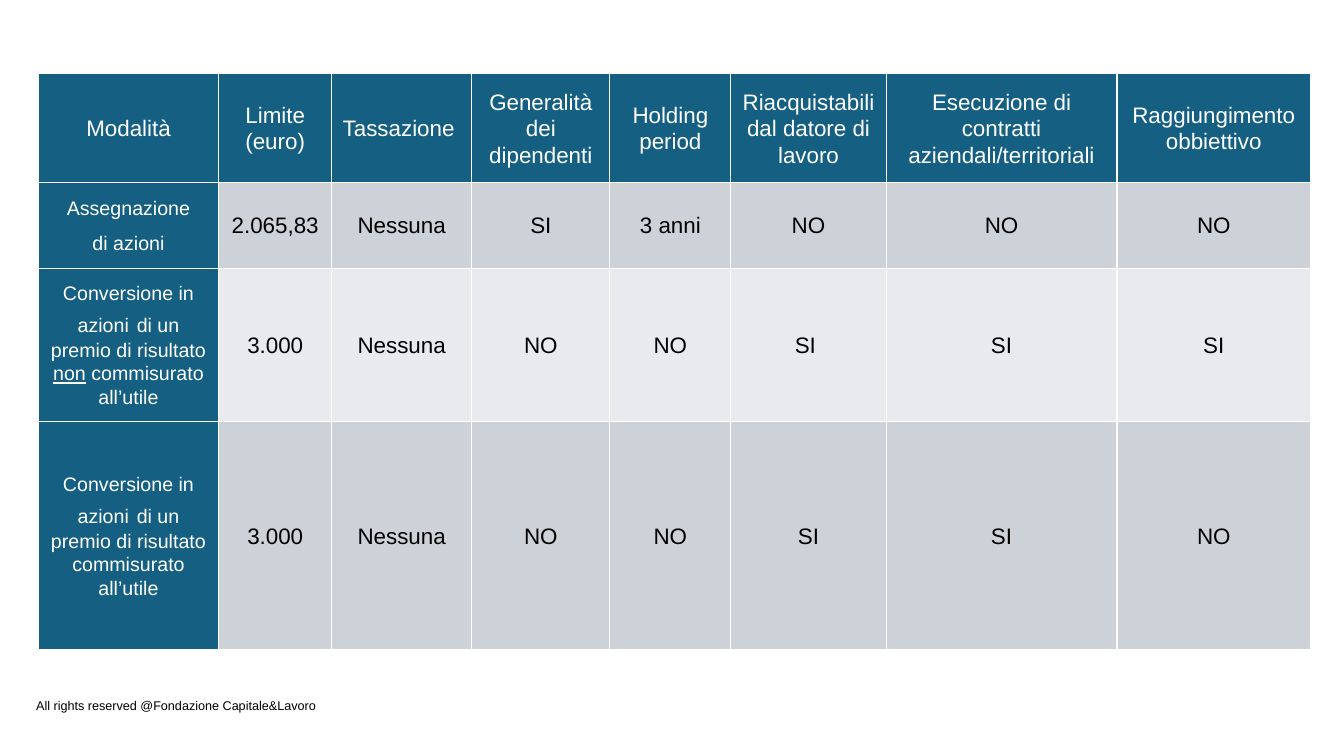
from dataclasses import dataclass

import pptx
import pptx.dml.color
import pptx.enum.text
import pptx.oxml
import pptx.oxml.ns
import pptx.util
from pptx.util import Inches


@dataclass(frozen=True)
class Theme:
    font: str = "Arial"
    accent: str = "156082"
    bands: tuple = ("CCD2D8", "E8EAED")
    light: str = "FFFFFF"
    dark: str = "000000"
    body_size: int = 16
    mode_size: int = 14
    gap_size: int = 20
    footer_size: int = 9
    border_width: int = 1


def apply_format(target, values):
    for name, value in values.items():
        setattr(target, name, value)


class ComparisonSlide:
    def __init__(self, presentation, theme):
        self.theme = theme
        self.slide = presentation.slides.add_slide(presentation.slide_layouts[6])

    def add_run(self, paragraph, text, size, colour, underline=False):
        run = paragraph.add_run()
        run.text = text
        apply_format(run.font, {
            "name": self.theme.font,
            "size": pptx.util.Pt(size),
            "bold": False,
            "underline": underline,
        })
        run.font.color.rgb = pptx.dml.color.RGBColor.from_string(colour)

    def add_footer(self, text, left, top, width, height):
        footer = self.slide.shapes.add_textbox(
            Inches(left), Inches(top), Inches(width), Inches(height))
        footer.text_frame.word_wrap = True
        self.add_run(footer.text_frame.paragraphs[0], text,
                     self.theme.footer_size, self.theme.dark)

    def add_borders(self, cell):
        properties = cell._tc.get_or_add_tcPr()
        for side in "LRTB":
            properties.append(pptx.oxml.parse_xml(
                f'<a:ln{side} {pptx.oxml.ns.nsdecls("a")} '
                f'w="{pptx.util.Pt(self.theme.border_width)}"><a:solidFill>'
                f'<a:srgbClr val="{self.theme.light}"/></a:solidFill></a:ln{side}>'))

    def fill_cell(self, cell, paragraphs, size, colour, fill):
        self.add_borders(cell)
        apply_format(cell, {
            "margin_left": Inches(0.07),
            "margin_right": Inches(0.07),
            "margin_top": 0,
            "margin_bottom": 0,
            "vertical_anchor": pptx.enum.text.MSO_ANCHOR.MIDDLE,
        })
        cell.fill.solid()
        cell.fill.fore_color.rgb = pptx.dml.color.RGBColor.from_string(fill)
        for index, runs in enumerate(paragraphs):
            frame = cell.text_frame
            paragraph = frame.add_paragraph() if index else frame.paragraphs[0]
            apply_format(paragraph, {
                "alignment": pptx.enum.text.PP_ALIGN.CENTER,
                "line_spacing": 1.07,
                "space_after": pptx.util.Pt(8),
            })
            for text, changes in runs:
                self.add_run(paragraph, text,
                             **{"size": size, "colour": colour, **changes})

    def add_table(self, left, top, widths, heights, headings, modes, answers):
        theme = self.theme
        table = self.slide.shapes.add_table(
            len(heights), len(widths), Inches(left), Inches(top),
            Inches(sum(widths)), Inches(sum(heights))).table
        apply_format(table, {"first_row": False, "horz_banding": False})
        for column, width in zip(table.columns, widths):
            column.width = Inches(width)
        for row, height in zip(table.rows, heights):
            row.height = Inches(height)
        for column, heading in enumerate(headings):
            self.fill_cell(table.cell(0, column), [[(heading, {})]],
                           theme.body_size, theme.light, theme.accent)
        for row, (mode, values) in enumerate(zip(modes, answers), 1):
            self.fill_cell(table.cell(row, 0), mode,
                           theme.mode_size, theme.light, theme.accent)
            band = theme.bands[(row - 1) % len(theme.bands)]
            for column, value in enumerate(values, 1):
                self.fill_cell(table.cell(row, column), [[(value, {})]],
                               theme.body_size, theme.dark, band)


def main():
    theme = Theme()
    presentation = pptx.Presentation()
    apply_format(presentation, {
        "slide_width": Inches(13.33), "slide_height": Inches(7.5)})
    page = ComparisonSlide(presentation, theme)
    page.add_footer("All rights reserved @Fondazione Capitale&Lavoro",
                    0.26, 6.87, 3.11, 0.25)

    headings = ["Modalità", "Limite (euro)", "Tassazione ",
                "Generalità dei dipendenti", "Holding period",
                "Riacquistabili dal datore di lavoro",
                "Esecuzione di contratti aziendali/territoriali",
                "Raggiungimento obbiettivo"]
    conversion = [("Conversione in azioni", {}), (" ", {"size": theme.gap_size})]
    modes = [
        [[("Assegnazione", {})], [("di azioni", {})]],
        [conversion + [("di un premio di risultato ", {}),
                       ("non", {"underline": True}),
                       (" commisurato all’utile", {})]],
        [conversion + [("di un premio di risultato commisurato all’utile", {})]],
    ]
    answers = [
        ["2.065,83", "Nessuna", "SI", "3 anni", "NO", "NO", "NO"],
        ["3.000", "Nessuna", "NO", "NO", "SI ", "SI", "SI"],
        ["3.000", "Nessuna", "NO", "NO", "SI", "SI", "NO"],
    ]
    page.add_table(0.38, 0.73,
                   [1.79, 1.12, 1.39, 1.37, 1.2, 1.54, 2.29, 1.92],
                   [1.08, 0.85, 1.52, 2.27], headings, modes, answers)
    presentation.save("out.pptx")


if __name__ == "__main__":
    main()
